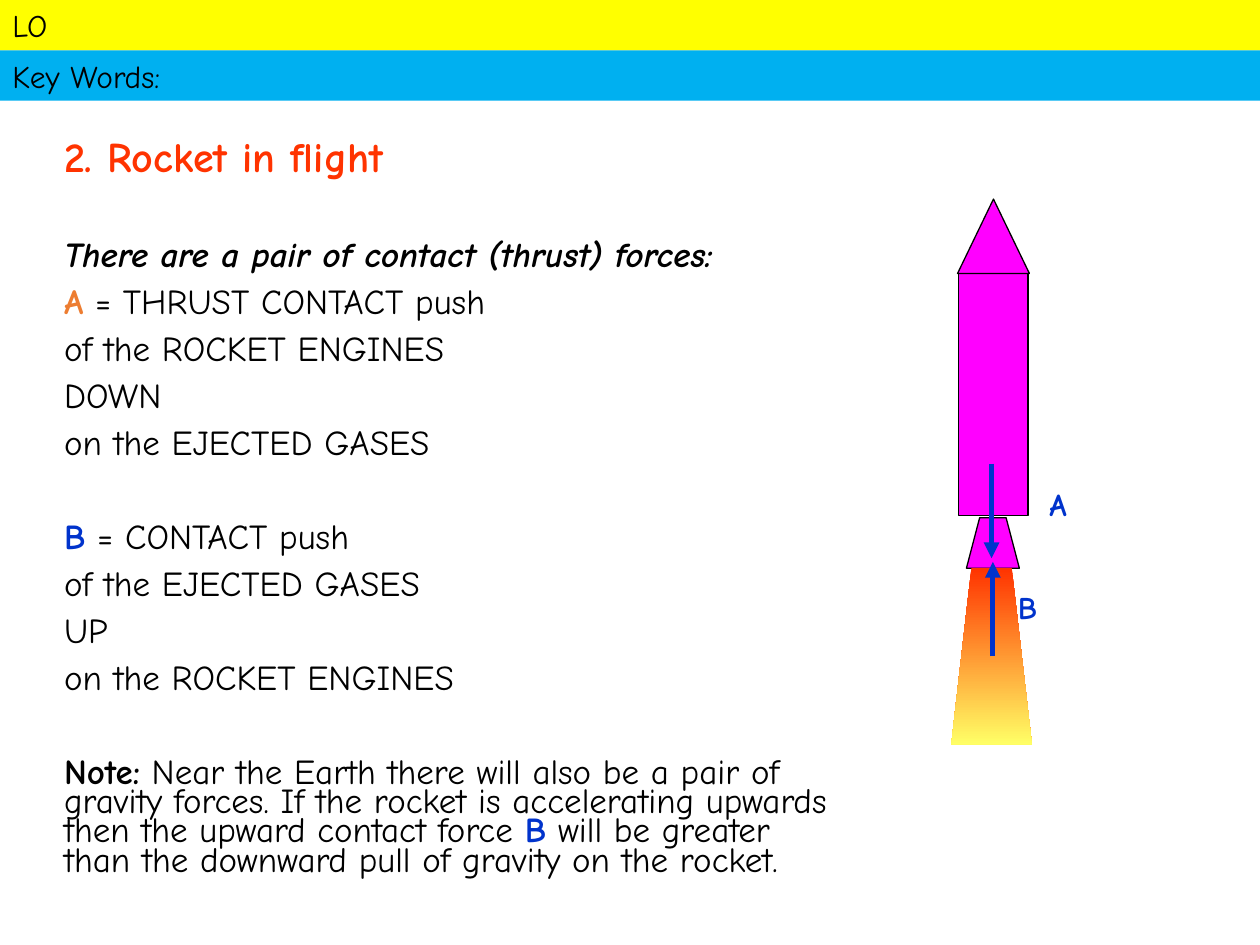
from dataclasses import dataclass

from lxml.etree import SubElement
from pptx import Presentation
from pptx.dml.color import RGBColor
from pptx.enum.shapes import MSO_CONNECTOR, MSO_SHAPE
from pptx.enum.text import MSO_ANCHOR, PP_ALIGN
from pptx.oxml.ns import qn
from pptx.util import Emu, Inches, Pt

COLUMNS, ROWS = 100, 75
WIDTH, HEIGHT = Inches(10), Inches(7.5)
FONT = "Comic Neue"
BLACK, WHITE, BLUE, RED = "000000", "FFFFFF", "0033CC", "FF3300"
ORANGE, MAGENTA, PALE_YELLOW = "ED7D31", "FF00FF", "FFFF66"
LINE_GAP, SECTION_GAP = 10, 36.8


@dataclass(frozen=True)
class Box:
    """Place on the slide grid, in columns and rows."""
    left: float
    top: float
    width: float
    height: float

    def lengths(self) -> tuple:
        return (across(self.left), down(self.top),
                across(self.width), down(self.height))


@dataclass(frozen=True)
class Words:
    text: str
    size: float = 20
    color: str = BLACK
    bold: bool = False
    italic: bool = False


@dataclass(frozen=True)
class Line:
    words: tuple
    gap: float = LINE_GAP


@dataclass(frozen=True)
class Force:
    name: str
    column: float
    start: float
    end: float
    label: Box
    label_fill: str | None = None


def across(columns: float) -> Emu:
    return Emu(round(WIDTH * columns / COLUMNS))


def down(rows: float) -> Emu:
    return Emu(round(HEIGHT * rows / ROWS))


def rgb(color: str) -> RGBColor:
    return RGBColor.from_string(color)


def paint(shape, fill: str | None, outline: str | None = None) -> None:
    shape.shadow.inherit = False
    if fill:
        shape.fill.solid()
        shape.fill.fore_color.rgb = rgb(fill)
    if outline:
        shape.line.color.rgb = rgb(outline)
        shape.line.width = Pt(0.75)
    else:
        shape.line.fill.background()


def add_preset(slide, kind, box: Box, fill: str, outline: str | None = None):
    shape = slide.shapes.add_shape(kind, *box.lengths())
    paint(shape, fill, outline)
    return shape


def add_trapezoid(slide, center: float, top: float, bottom: float,
                  top_width: float, bottom_width: float):
    """Draw an upright trapezoid that is symmetric about a column."""
    points = [(across(center + side * width / 2), down(row))
              for side, width, row in ((-1, top_width, top), (1, top_width, top),
                                       (1, bottom_width, bottom), (-1, bottom_width, bottom))]
    builder = slide.shapes.build_freeform(*points[0])
    builder.add_line_segments(points[1:], close=True)
    return builder.convert_to_shape()


def write(shape, lines: list, anchor=MSO_ANCHOR.TOP, spacing: float = 1) -> None:
    frame = shape.text_frame
    frame.word_wrap = True
    frame.vertical_anchor = anchor
    for index, line in enumerate(lines):
        paragraph = frame.add_paragraph() if index else frame.paragraphs[0]
        layout = {"alignment": PP_ALIGN.LEFT, "line_spacing": spacing,
                  "space_before": Pt(line.gap if index else 0)}
        for name, value in layout.items():
            setattr(paragraph, name, value)
        for words in line.words:
            run = paragraph.add_run()
            run.text = words.text
            style = {"name": FONT, "size": Pt(words.size),
                     "bold": words.bold, "italic": words.italic}
            for name, value in style.items():
                setattr(run.font, name, value)
            run.font.color.rgb = rgb(words.color)


def add_force(slide, force: Force) -> None:
    arrow = slide.shapes.add_connector(
        MSO_CONNECTOR.STRAIGHT, across(force.column), down(force.start),
        across(force.column), down(force.end))
    arrow.line.color.rgb = rgb(BLUE)
    arrow.line.width = Pt(3)
    SubElement(arrow.line._get_or_add_ln(), qn("a:tailEnd"), type="triangle")
    SubElement(arrow._element.spPr, qn("a:effectLst"))
    if force.label_fill:
        label = add_preset(slide, MSO_SHAPE.RECTANGLE, force.label, force.label_fill)
    else:
        label = slide.shapes.add_textbox(*force.label.lengths())
    write(label, [Line((Words(force.name, 18, BLUE, True),))])


def add_rocket(slide) -> None:
    add_preset(slide, MSO_SHAPE.RECTANGLE, Box(76.1, 21.7, 5.5, 19.2), MAGENTA, BLACK)
    add_preset(slide, MSO_SHAPE.ISOSCELES_TRIANGLE, Box(76, 15.8, 5.7, 5.9), MAGENTA, BLACK)
    nozzle = add_trapezoid(slide, 78.8, 41.1, 45.1, 2.1, 4.2)
    paint(nozzle, MAGENTA, BLACK)
    flame = add_trapezoid(slide, 78.7, 45.1, 59.1, 3.2, 6.4)
    paint(flame, None)
    flame.fill.gradient()
    flame.fill.gradient_angle = 270
    for stop, color in zip(flame.fill.gradient_stops, (RED, PALE_YELLOW)):
        stop.color.rgb = rgb(color)


def plain(text: str) -> Line:
    return Line((Words(text),))


BANNERS = [("LO", "FFFF00"), ("Key Words:", "00B0F0")]
EXPLANATION = [
    Line((Words("2. Rocket in flight", 24, RED, True),)),
    Line((Words("There are a pair of contact (thrust) forces:", bold=True, italic=True),),
         SECTION_GAP),
    Line((Words("A", color=ORANGE, bold=True), Words(" = THRUST CONTACT push"))),
    plain("of the ROCKET ENGINES"),
    plain("DOWN"),
    plain("on the EJECTED GASES"),
    Line((Words("B", color=BLUE, bold=True), Words(" = CONTACT push")), SECTION_GAP),
    plain("of the EJECTED GASES"),
    plain("UP"),
    plain("on the ROCKET ENGINES"),
    Line((Words("Note:", bold=True),
          Words(" Near the Earth there will also be a pair of gravity forces. If the rocket "
                "is accelerating upwards then the upward contact force "),
          Words("B", color=BLUE, bold=True),
          Words(" will be greater than the downward pull of gravity on the rocket.")),
         SECTION_GAP),
]
FORCES = [
    Force("A", 78.7, 36.8, 44.3, Box(82.3, 38, 4, 4), WHITE),
    Force("B", 78.8, 52.1, 44.6, Box(79.8, 46.2, 5.7, 4)),
]


def main() -> None:
    presentation = Presentation()
    presentation.slide_width, presentation.slide_height = WIDTH, HEIGHT
    slide = presentation.slides.add_slide(presentation.slide_layouts[6])
    for index, (text, color) in enumerate(BANNERS):
        banner = add_preset(slide, MSO_SHAPE.RECTANGLE, Box(0, 4 * index, COLUMNS, 4), color)
        write(banner, [Line((Words(text, 18),))], MSO_ANCHOR.MIDDLE)
    body = slide.shapes.add_textbox(*Box(4.1, 11, 63.5, 62.7).lengths())
    write(body, EXPLANATION, spacing=0.7)
    add_rocket(slide)
    for force in FORCES:
        add_force(slide, force)
    presentation.save("out.pptx")


if __name__ == "__main__":
    main()
